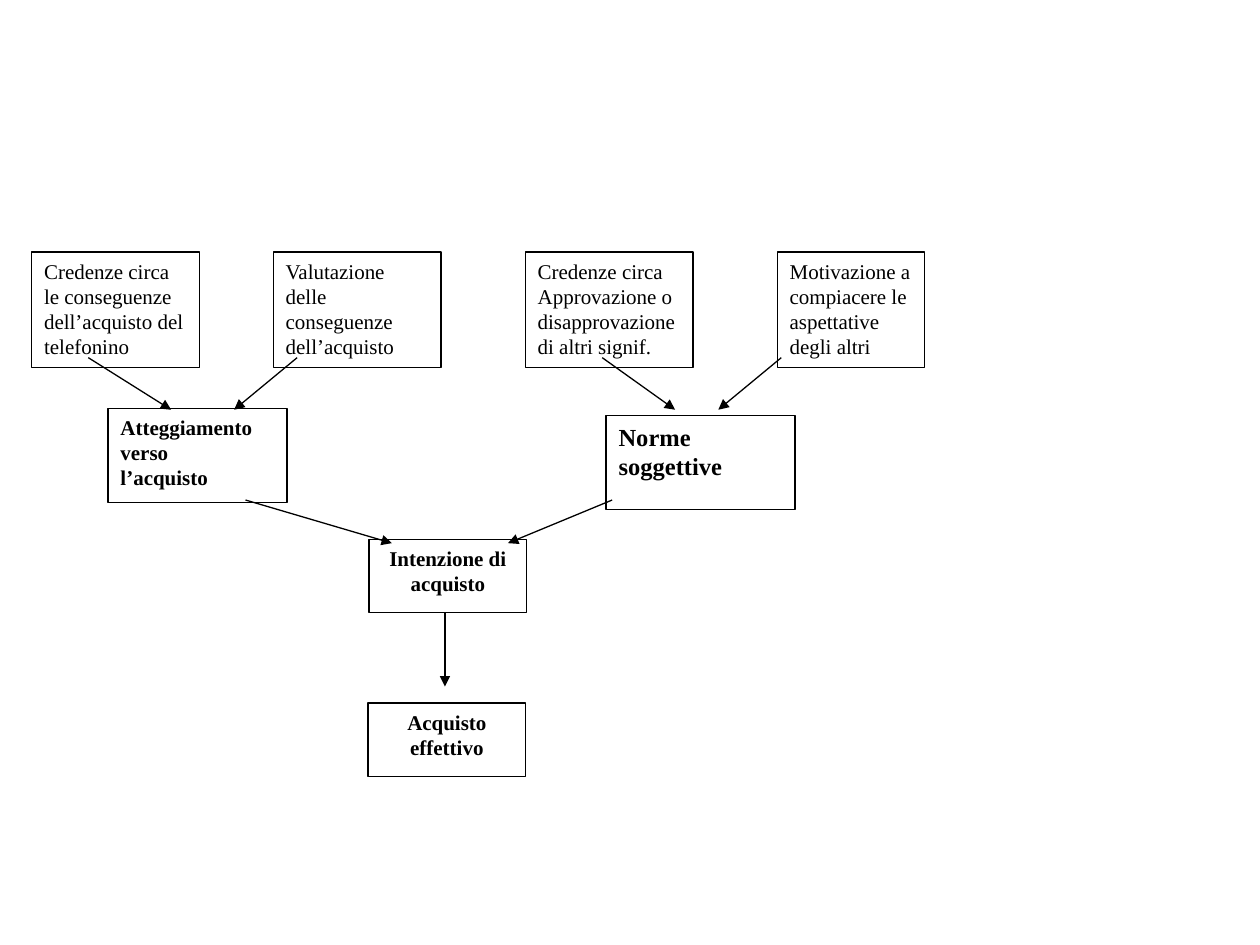
import pptx
import pptx.util
import pptx.dml.color
import pptx.enum.shapes
import pptx.enum.text
import pptx.oxml
from pptx.oxml.ns import qn
from pptx.util import Cm

FONT = "Times New Roman"
BLACK, WHITE = "000000", "FFFFFF"
LEFT, CENTER = pptx.enum.text.PP_ALIGN.LEFT, pptx.enum.text.PP_ALIGN.CENTER

BELIEF_TOP, BELIEF_HEIGHT = 5.08, 2.33
BELIEFS = [
    (0.64, 3.38, ["Credenze circa le conseguenze", "dell’acquisto del", "telefonino"]),
    (5.51, 3.38, ["Valutazione delle conseguenze dell’acquisto"]),
    (10.59, 3.38, ["Credenze circa", "Approvazione o disapprovazione di altri signif."]),
    (15.67, 2.97, ["Motivazione a compiacere le aspettative", "degli altri"]),
]
OUTCOMES = [
    (2.18, 8.23, 3.61, 1.9, ["Atteggiamento verso", "l’acquisto"], 12, LEFT),
    (12.22, 8.38, 3.81, 1.9, ["Norme", "soggettive"], 14, LEFT),
    (7.44, 10.87, 3.18, 1.48, ["Intenzione di", "acquisto"], 12, CENTER),
    (7.42, 14.17, 3.18, 1.48, ["Acquisto effettivo"], 12, CENTER),
]
ARROW_ROWS = [
    (7.21, 8.26, [(1.78, 3.45), (5.99, 4.72), (12.14, 13.61), (15.75, 14.48)]),
    (10.08, 10.95, [(4.95, 7.9), (12.34, 10.24)]),
    (12.34, 13.84, [(8.97, 8.97)]),
]


def color(hex_value):
    return pptx.dml.color.RGBColor.from_string(hex_value)


def set_line(line):
    line.color.rgb = color(BLACK)
    line.width = pptx.util.Pt(0.75)


def add_box(s, x, y, w, h, lines, size=12, align=LEFT, bold=False):
    sp = s.shapes.add_shape(pptx.enum.shapes.MSO_SHAPE.RECTANGLE, Cm(x), Cm(y), Cm(w), Cm(h))
    sp.shadow.inherit = False
    sp.fill.solid()
    sp.fill.fore_color.rgb = color(WHITE)
    set_line(sp.line)
    tf = sp.text_frame
    tf.word_wrap = True
    tf.vertical_anchor = pptx.enum.text.MSO_ANCHOR.TOP
    for i, text in enumerate(lines):
        p = tf.add_paragraph() if i else tf.paragraphs[0]
        p.alignment = align
        r = p.add_run()
        r.text = text
        r.font.name = FONT
        r.font.size = pptx.util.Pt(size)
        r.font.bold = bold
        r.font.color.rgb = color(BLACK)


def add_arrow(s, x1, y1, x2, y2):
    straight = pptx.enum.shapes.MSO_CONNECTOR.STRAIGHT
    sp = s.shapes.add_connector(straight, Cm(x1), Cm(y1), Cm(x2), Cm(y2))
    set_line(sp.line)
    tail = pptx.oxml.xmlchemy.OxmlElement("a:tailEnd")
    tail.set("type", "triangle")
    sp.line._get_or_add_ln().append(tail)
    sp._element.find(qn("p:spPr")).append(pptx.oxml.xmlchemy.OxmlElement("a:effectLst"))


def main():
    prs = pptx.Presentation()
    prs.slide_width, prs.slide_height = Cm(25.4), Cm(19.05)
    s = prs.slides.add_slide(prs.slide_layouts[6])
    for x, w, lines in BELIEFS:
        add_box(s, x, BELIEF_TOP, w, BELIEF_HEIGHT, lines)
    for x, y, w, h, lines, size, align in OUTCOMES:
        add_box(s, x, y, w, h, lines, size, align, bold=True)
    for y1, y2, spans in ARROW_ROWS:
        for x1, x2 in spans:
            add_arrow(s, x1, y1, x2, y2)
    prs.save("out.pptx")


if __name__ == "__main__":
    main()
